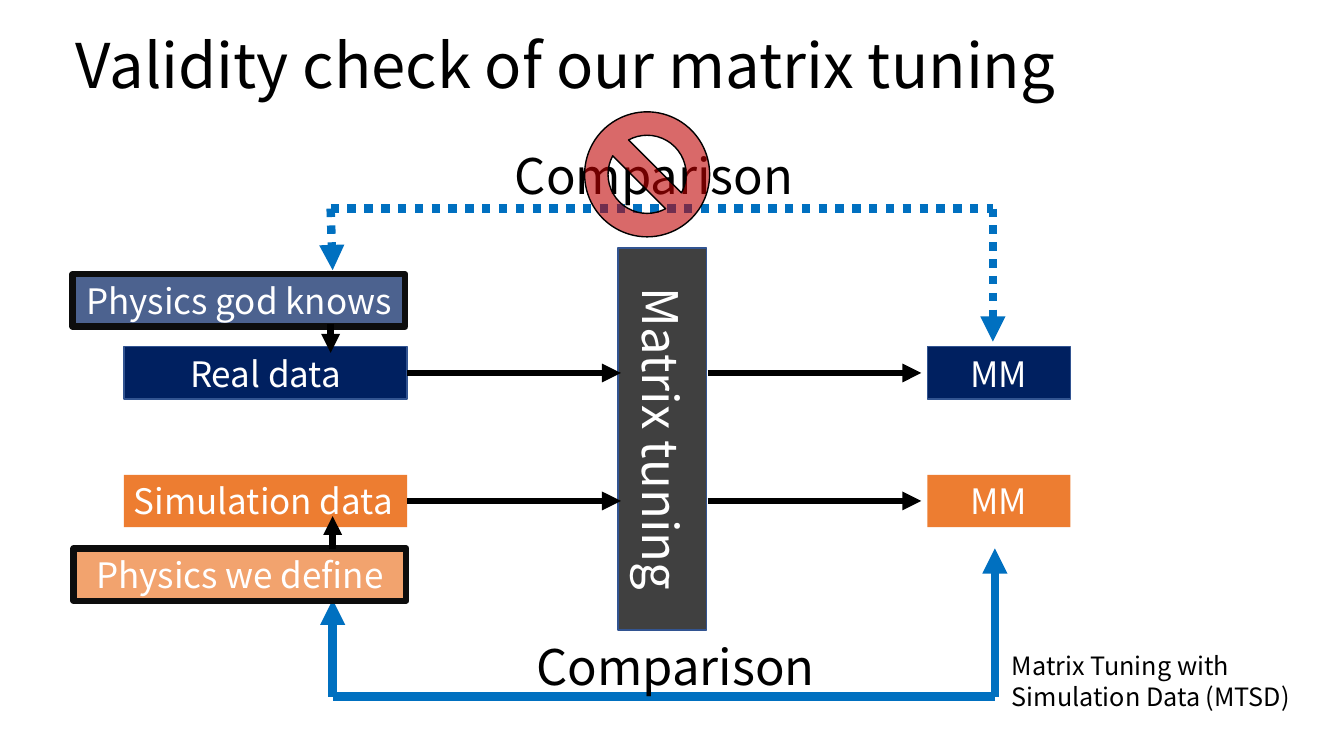
from lxml.etree import SubElement
from pptx import Presentation
from pptx.dml.color import RGBColor
from pptx.enum.dml import MSO_LINE
from pptx.enum.shapes import MSO_CONNECTOR, MSO_SHAPE
from pptx.enum.text import MSO_ANCHOR, MSO_AUTO_SIZE, PP_ALIGN
from pptx.oxml.ns import qn
from pptx.util import Inches, Pt

COLUMNS, ROWS = 133.33, 75
CELL = Inches(0.1)
FONT = "Noto Sans CJK JP"
BLACK, WHITE = "000000", "FFFFFF"
NAVY, ORANGE, BLUE = "002060", "ED7D31", "0070C0"
NAVY_EDGE, FRAME = "325491", "0D0D0D"

REAL_ROW, SIMULATION_ROW = 37, 49.7
BOX_HEIGHT = 5.2


def cells(*lengths):
    """Turn counts of grid cells into slide lengths."""
    return [round(length * CELL) for length in lengths]


def color(hex_string):
    return RGBColor.from_string(hex_string)


def write_text(shape, text, size=25, font_color=WHITE, align=PP_ALIGN.CENTER,
               line_spacing=None):
    frame = shape.text_frame
    frame.text = text
    frame.word_wrap = True
    frame.auto_size = MSO_AUTO_SIZE.NONE
    frame.vertical_anchor = MSO_ANCHOR.MIDDLE
    for paragraph in frame.paragraphs:
        paragraph.alignment = align
        paragraph.line_spacing = line_spacing
        font = paragraph.runs[0].font
        font.name, font.size = FONT, Pt(size)
        font.color.rgb = color(font_color)


def add_title(slide, text):
    title = slide.shapes.title
    title.left, title.top, title.width, title.height = cells(6.5, 1.1, 115, 11.4)
    write_text(title, text, size=44, font_color=BLACK, align=PP_ALIGN.LEFT,
               line_spacing=0.9)


def add_label(slide, text, left, top, height, size):
    label = slide.shapes.add_textbox(*cells(left, top, 31, height))
    write_text(label, text, size=size, font_color=BLACK, align=PP_ALIGN.LEFT)


def add_box(slide, left, top, width, height, fill, edge=None, edge_width=1,
            opacity=100, preset=MSO_SHAPE.RECTANGLE):
    box = slide.shapes.add_shape(preset, *cells(left, top, width, height))
    box.shadow.inherit = False
    box.fill.solid()
    box.fill.fore_color.rgb = color(fill)
    if opacity < 100:
        fill_color = box.fill._xPr.find(qn("a:solidFill"))[0]
        SubElement(fill_color, qn("a:alpha"), val=str(opacity * 1000))
    if edge:
        box.line.color.rgb = color(edge)
        box.line.width = Pt(edge_width)
    else:
        box.line.fill.background()
    return box


def add_text_box(slide, text, left, middle, width, fill, align=PP_ALIGN.CENTER,
                 **box_format):
    """Add a one-line box centred on the given grid row."""
    box = add_box(slide, left, middle - BOX_HEIGHT / 2, width, BOX_HEIGHT, fill,
                  **box_format)
    write_text(box, text, align=align)
    return box


def add_line(slide, start, end, line_color=BLACK, width=4.5, arrow=True,
             dash=None, source=None):
    """Draw a line, joined to the right side of source if one is given."""
    line = slide.shapes.add_connector(MSO_CONNECTOR.STRAIGHT, *cells(*start, *end))
    if source is not None:
        line.begin_connect(source, 3)
    line.line.color.rgb = color(line_color)
    line.line.width = Pt(width)
    if dash:
        line.line.dash_style = dash
    if arrow:
        SubElement(line.line._get_or_add_ln(), qn("a:tailEnd"), type="triangle")
    SubElement(line._element.spPr, qn("a:effectLst"))


def add_bracket(slide, row, left, right, left_tip, right_tip, dash=None):
    """Draw a level line with an arrow from each end to its tip."""
    line_format = {"line_color": BLUE, "width": 6, "dash": dash}
    add_line(slide, (left, row), (right, row), arrow=False, **line_format)
    add_line(slide, (left, row), left_tip, **line_format)
    add_line(slide, (right, row), right_tip, **line_format)


def add_data_flow(slide, name, row, fill, edge=None, align=PP_ALIGN.CENTER):
    """Add a data box, its result box and the arrows through the tuning block."""
    data = add_text_box(slide, name, 12.3, row, 28.1, fill, edge=edge, align=align)
    add_text_box(slide, "MM", 92, row, 14.2, fill, edge=edge)
    add_line(slide, (40.4, row), (61.6, row), source=data)
    add_line(slide, (70.2, row), (91.4, row))


def main():
    presentation = Presentation()
    presentation.slide_width, presentation.slide_height = cells(COLUMNS, ROWS)
    slide = presentation.slides.add_slide(presentation.slide_layouts[5])
    add_title(slide, "Validity check of our matrix tuning")

    tuning = add_box(slide, 61.3, 24.6, 8.8, 37.9, "404040", edge=NAVY_EDGE)
    write_text(tuning, "Matrix tuning", size=35)
    tuning.text_frame._txBody.bodyPr.set("vert", "vert")

    add_data_flow(slide, "Real data", REAL_ROW, NAVY, edge=NAVY_EDGE)
    add_data_flow(slide, "Simulation data", SIMULATION_ROW, ORANGE,
                  align=PP_ALIGN.LEFT)

    add_bracket(slide, 69.1, 33, 98.7, (33, 59.5), (98.7, 54.4))
    add_label(slide, "Comparison", 52.2, 62.6, 6.9, size=35)
    add_bracket(slide, 20.7, 32.8, 98.5, (33, 26.8), (98.5, 33.9),
                dash=MSO_LINE.ROUND_DOT)
    add_label(slide, "Comparison", 50.1, 13.9, 6.9, size=35)
    add_box(slide, 58, 11.1, 12.4, 12.4, "C00000", edge=BLACK, opacity=59,
            preset=MSO_SHAPE.NO_SYMBOL)
    add_label(slide, "Matrix Tuning with\nSimulation Data (MTSD)", 99.4, 64, 7.1,
              size=18)

    frame_format = {"edge": FRAME, "edge_width": 4.5, "opacity": 70}
    add_text_box(slide, "Physics god knows", 7.2, 29.8, 33, NAVY, **frame_format)
    add_line(slide, (32.8, 32.1), (32.8, 35))
    add_text_box(slide, "Physics we define", 7.3, 57, 33, ORANGE, **frame_format)
    add_line(slide, (33, 54.5), (33, 51.2))

    presentation.save("out.pptx")


if __name__ == "__main__":
    main()
